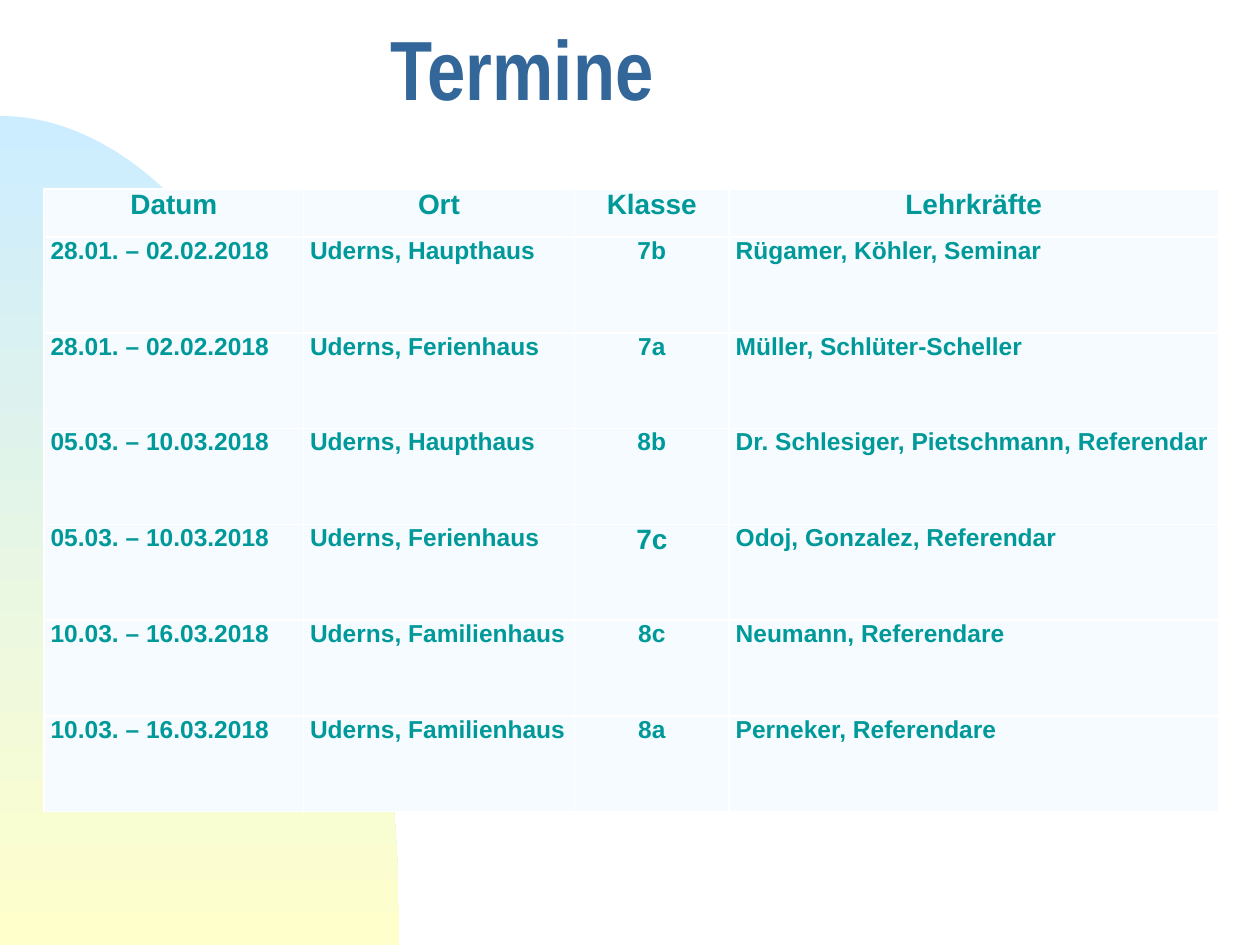
"""Build the slide "Termine" with a table of dates, places, classes and teachers."""
import math

from lxml import etree
from pptx import Presentation
from pptx import util as u
from pptx.dml import color as dml
from pptx.enum import text
from pptx.oxml import ns

COLORS = {
    "title": "336699",
    "table_text": "009999",
    "cell": "F6FBFF",
    "border": "FFFFFF",
    "sky": "CCECFF",
    "sand": "FFFFCC",
}
HEADERS = ["Datum", "Ort", "Klasse", "Lehrkräfte"]
DATES = ["28.01. – 02.02.2018", "05.03. – 10.03.2018", "10.03. – 16.03.2018"]
ROWS = [
    HEADERS,
    [DATES[0], "Uderns, Haupthaus", "7b", "Rügamer, Köhler, Seminar"],
    [DATES[0], "Uderns, Ferienhaus", "7a", "Müller, Schlüter-Scheller"],
    [DATES[1], "Uderns, Haupthaus", "8b", "Dr. Schlesiger, Pietschmann, Referendar"],
    [DATES[1], "Uderns, Ferienhaus", "7c", "Odoj, Gonzalez, Referendar"],
    [DATES[2], "Uderns, Familienhaus", "8c", "Neumann, Referendare"],
    [DATES[2], "Uderns, Familienhaus", "8a", "Perneker, Referendare"],
]
COLUMN_WIDTHS = [5.23, 5.46, 3.12, 9.86]
HEADER_HEIGHT, ROW_HEIGHT = 0.97, 1.93
ARC_WIDTH, ARC_HEIGHT, ARC_STEPS = 8.05, 16.71, 90


def format_run(run, font_name, size, color):
    run.font.name = font_name
    run.font.size = u.Pt(size)
    run.font.bold = True
    run.font.color.rgb = dml.RGBColor.from_string(COLORS[color])


def add_borders(cell):
    properties = cell._tc.get_or_add_tcPr()
    for index, side in enumerate(["lnL", "lnR", "lnT", "lnB"]):
        line = etree.Element(ns.qn(f"a:{side}"), w=str(u.Pt(1)))
        fill = etree.SubElement(line, ns.qn("a:solidFill"))
        etree.SubElement(fill, ns.qn("a:srgbClr"), val=COLORS["border"])
        properties.insert(index, line)


presentation = Presentation()
presentation.slide_width = u.Cm(25.4)
presentation.slide_height = u.Cm(19.05)
slide = presentation.slides.add_slide(presentation.slide_layouts[5])

arc_points = []
for step in range(ARC_STEPS + 1):
    angle = math.pi / 2 * step / ARC_STEPS
    x = u.Cm(ARC_WIDTH * math.sin(angle))
    y = u.Cm(19.05 - ARC_HEIGHT * math.cos(angle))
    arc_points.append((x, y))
builder = slide.shapes.build_freeform(0, u.Cm(19.05))
builder.add_line_segments(arc_points, close=True)
arc = builder.convert_to_shape()
arc.shadow.inherit = False
arc.line.fill.background()
arc.fill.gradient()
arc.fill.gradient_angle = 270
for stop, color in zip(arc.fill.gradient_stops, ["sky", "sand"]):
    stop.color.rgb = dml.RGBColor.from_string(COLORS[color])

title = slide.shapes.title
arc.element.addnext(title.element)
title.left, title.top = u.Cm(7.62), u.Cm(0)
title.width, title.height = u.Cm(16.94), u.Cm(3.18)
title.text_frame.text = "Termine"
title.text_frame.vertical_anchor = text.MSO_ANCHOR.MIDDLE
paragraph = title.text_frame.paragraphs[0]
paragraph.alignment = text.PP_ALIGN.LEFT
paragraph.line_spacing = 0.7
format_run(paragraph.runs[0], "Arial Narrow", 48, "title")

table_height = HEADER_HEIGHT + ROW_HEIGHT * (len(ROWS) - 1)
table = slide.shapes.add_table(
    len(ROWS), len(HEADERS), u.Cm(0.89), u.Cm(3.81),
    u.Cm(sum(COLUMN_WIDTHS)), u.Cm(table_height),
).table
table.first_row = False
table.horz_banding = False
for column, width in zip(table.columns, COLUMN_WIDTHS):
    column.width = u.Cm(width)

for row_index, values in enumerate(ROWS):
    is_header = row_index == 0
    table.rows[row_index].height = u.Cm(HEADER_HEIGHT if is_header else ROW_HEIGHT)
    for column_index, value in enumerate(values):
        cell = table.cell(row_index, column_index)
        cell.margin_left = cell.margin_right = u.Cm(0.13)
        cell.margin_top = cell.margin_bottom = u.Cm(0)
        add_borders(cell)
        cell.fill.solid()
        cell.fill.fore_color.rgb = dml.RGBColor.from_string(COLORS["cell"])
        cell.text_frame.text = value
        paragraph = cell.text_frame.paragraphs[0]
        centred = is_header or HEADERS[column_index] == "Klasse"
        paragraph.alignment = text.PP_ALIGN.CENTER if centred else text.PP_ALIGN.LEFT
        size = 16 if is_header or value == "7c" else 14
        format_run(paragraph.runs[0], "Arial", size, "table_text")

presentation.save("out.pptx")
